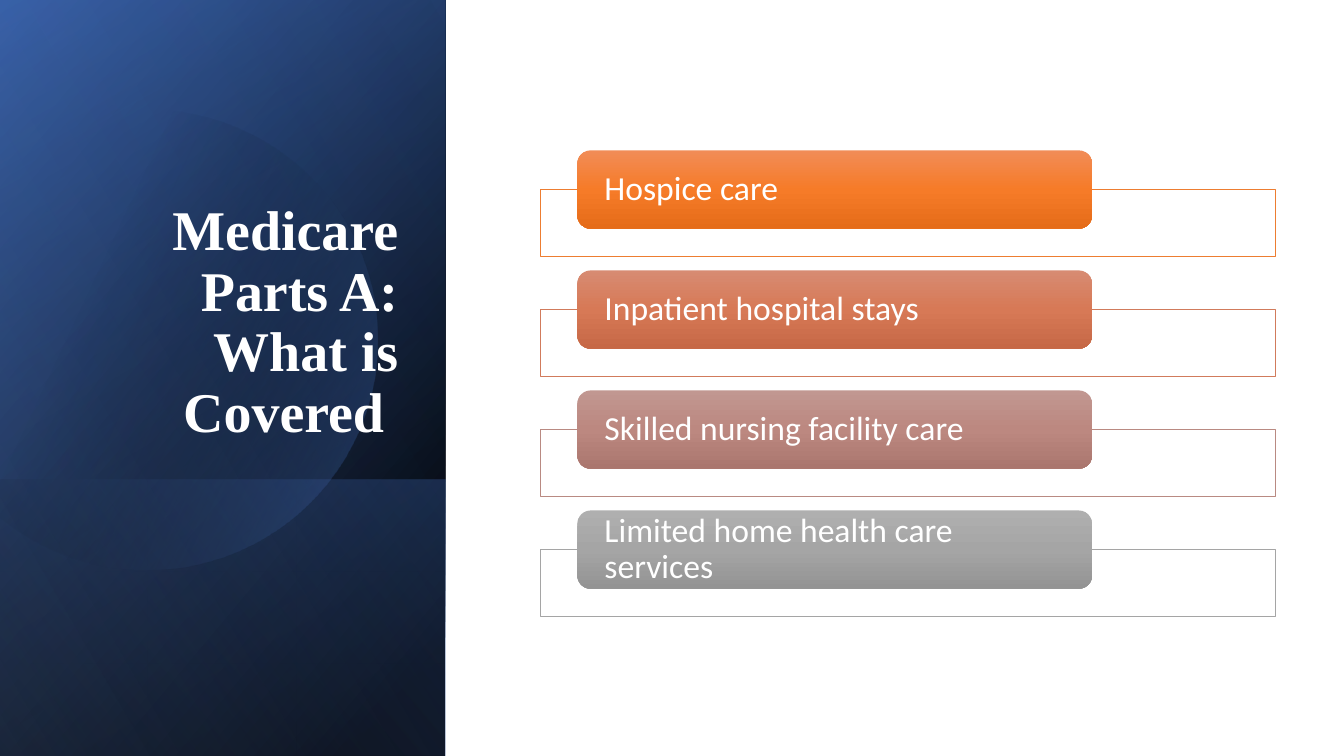
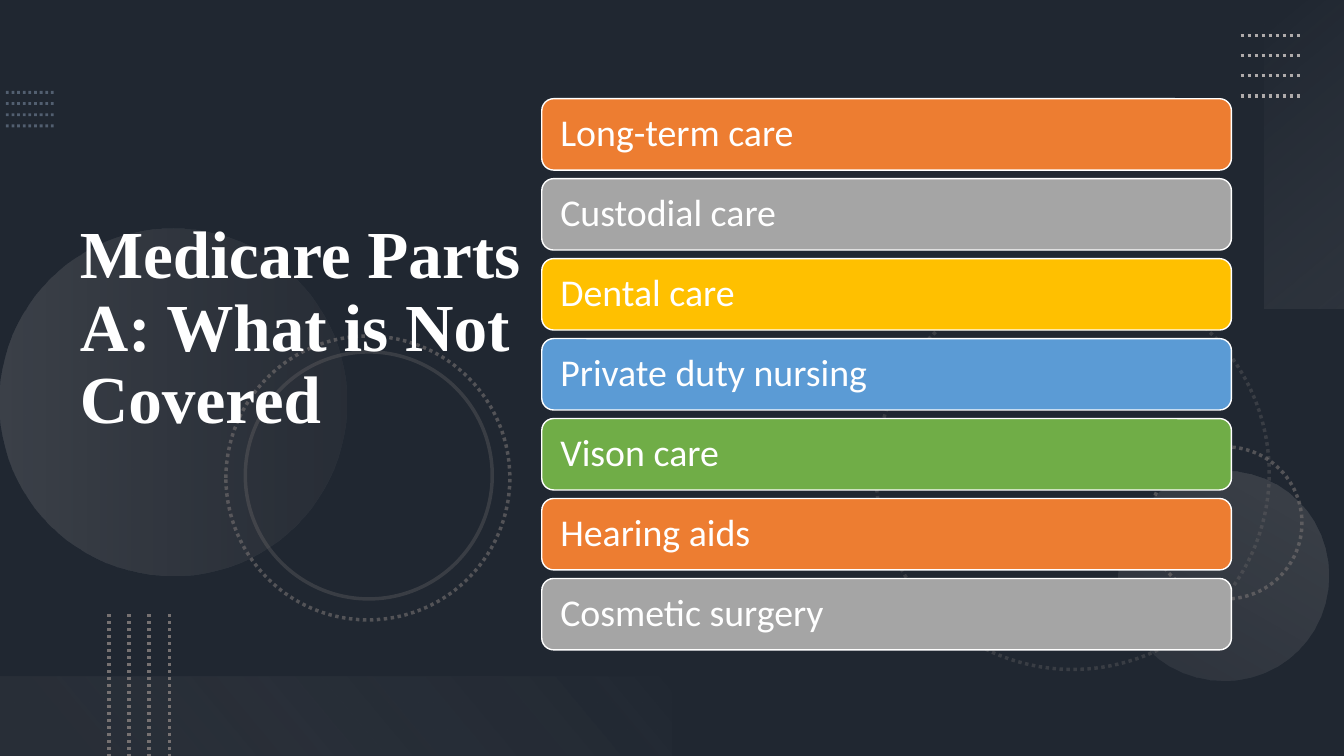
import math
from dataclasses import dataclass

from lxml import etree
from pptx import Presentation
from pptx import util as u
from pptx.dml.color import RGBColor
from pptx.enum import dml, shapes, text
from pptx.oxml import ns

COLS, ROWS = 160, 90
CELL = u.Inches(7.5) / ROWS


@dataclass(frozen=True)
class Theme:
    """Colours, fonts and type sizes of the deck."""
    white: str = "FFFFFF"
    black: str = "000000"
    navy: str = "2F5597"
    blue: str = "4472C4"
    pale_blue: str = "8FAADC"
    slate: str = "44546A"
    steel: str = "8497B0"
    silver: str = "AFABAB"
    stone: str = "767171"
    mist: str = "F5F5F5"
    orange: str = "ED7D31"
    grey: str = "A5A5A5"
    gold: str = "FFC000"
    sky: str = "5B9BD5"
    green: str = "70AD47"
    title_font: str = "Times New Roman"
    body_font: str = "Calibri"
    side_title: int = 40
    wide_title: int = 48
    card: int = 24
    bar: int = 27


T = Theme()


def cells(*values):
    """Turn grid cells into lengths."""
    return [u.Emu(round(v * CELL)) for v in values]


def add_alpha(colour, percent):
    """Make a colour element partly opaque."""
    if percent < 100:
        etree.SubElement(colour, ns.qn("a:alpha"), val=str(percent * 1000))


class Deck:
    """Draws styled elements on the current slide."""

    def __init__(self):
        """Start an empty wide presentation."""
        self.prs = Presentation()
        self.prs.slide_width, self.prs.slide_height = cells(COLS, ROWS)
        self.slide = None

    def new_slide(self, colour):
        """Add a title-only slide with a plain background."""
        self.slide = self.prs.slides.add_slide(self.prs.slide_layouts[5])
        fill = self.slide.background.fill
        fill.solid()
        fill.fore_color.rgb = RGBColor.from_string(colour)

    def title(self, words, box, size, align, anchor):
        """Place the title above everything drawn so far."""
        sp = self.slide.shapes.title
        self.slide.shapes._spTree.append(sp._element)
        sp.left, sp.top, sp.width, sp.height = cells(*box)
        self.label(sp, words, T.title_font, size, align, anchor)
        sp.text_frame.paragraphs[0].font.bold = True

    def label(self, sp, words, font, size, align=text.PP_ALIGN.LEFT,
              anchor=text.MSO_ANCHOR.MIDDLE):
        """Set one white paragraph in a shape."""
        tf = sp.text_frame
        tf.word_wrap, tf.auto_size = True, text.MSO_AUTO_SIZE.NONE
        tf.vertical_anchor = anchor
        p = tf.paragraphs[0]
        p.text, p.alignment, p.line_spacing = words, align, 0.9
        p.font.name, p.font.size = font, u.Pt(size)
        p.font.color.rgb = RGBColor.from_string(T.white)

    def stroke(self, line, colour, width, dotted=False, opacity=100):
        """Style an outline or a connector."""
        line.color.rgb = RGBColor.from_string(colour)
        line.width = u.Pt(width)
        if dotted:
            line.dash_style = dml.MSO_LINE.ROUND_DOT
        add_alpha(line._ln.find(".//" + ns.qn("a:srgbClr")), opacity)

    def paint(self, sp, fill=None, opacity=100, stops=None, angle=0):
        """Give a shape no fill, a solid fill or a gradient, and no line."""
        sp.shadow.inherit = False
        sp.line.fill.background()
        props = sp._element.spPr
        if fill:
            sp.fill.solid()
            sp.fill.fore_color.rgb = RGBColor.from_string(fill)
            add_alpha(props.find(ns.qn("a:solidFill"))[0], opacity)
            return
        sp.fill.background()
        if stops:
            grad = etree.Element(ns.qn("a:gradFill"), rotWithShape="1")
            gs_list = etree.SubElement(grad, ns.qn("a:gsLst"))
            for pos, colour, alpha in stops:
                gs = etree.SubElement(gs_list, ns.qn("a:gs"), pos=str(pos * 1000))
                add_alpha(etree.SubElement(gs, ns.qn("a:srgbClr"), val=colour), alpha)
            etree.SubElement(grad, ns.qn("a:lin"), ang=str(angle * 60000), scaled="0")
            props.replace(props.find(ns.qn("a:noFill")), grad)

    def shape(self, kind, box, **paint):
        """Add a preset shape."""
        sp = self.slide.shapes.add_shape(kind, *cells(*box))
        self.paint(sp, **paint)
        return sp

    def rect(self, box, **paint):
        """Add a rectangle."""
        return self.shape(shapes.MSO_SHAPE.RECTANGLE, box, **paint)

    def disc(self, x, y, size, **paint):
        """Add a circle."""
        return self.shape(shapes.MSO_SHAPE.OVAL, (x, y, size, size), **paint)

    def pill(self, words, box, size, inset, **paint):
        """Add a rounded bar with a label."""
        sp = self.shape(shapes.MSO_SHAPE.ROUNDED_RECTANGLE, box, **paint)
        tf = sp.text_frame
        tf.margin_left = tf.margin_right = u.Inches(inset)
        self.label(sp, words, T.body_font, size)
        return sp

    def cut_disc(self, cx, cy, radius, **paint):
        """Add a circle cut off at the left edge of the slide."""
        limit = math.acos(-cx / radius)
        turns = [limit * (i / 60 - 1) for i in range(121)]
        points = [cells(cx + radius * math.cos(a), cy + radius * math.sin(a))
                  for a in turns]
        builder = self.slide.shapes.build_freeform(*points[0])
        builder.add_line_segments(points[1:])
        self.paint(builder.convert_to_shape(), **paint)

    def dots(self, start, end, step, colour, width, opacity=100):
        """Add four parallel dotted lines."""
        for i in range(4):
            dx, dy = step[0] * i, step[1] * i
            line = self.slide.shapes.add_connector(
                shapes.MSO_CONNECTOR.STRAIGHT,
                *cells(start[0] + dx, start[1] + dy, end[0] + dx, end[1] + dy))
            self.stroke(line.line, colour, width, True, opacity)
            etree.SubElement(line._element.spPr, ns.qn("a:effectLst"))


def covered(deck):
    """Build the slide of covered services."""
    deck.new_slide(T.white)
    panel = (0, 0, 53, ROWS)
    deck.rect(panel, stops=[(8, T.black, 100), (100, T.navy, 100)], angle=220)
    deck.rect(panel, stops=[(0, T.black, 0), (99, T.blue, 46)], angle=240)
    deck.rect((0, 57.1, 53, 32.9), stops=[(2, T.blue, 29), (100, T.black, 30)], angle=140)
    deck.cut_disc(17.5, 40.4, 27.4, stops=[(29, T.black, 0), (100, T.blue, 43)], angle=25)
    deck.rect(panel, stops=[(0, T.black, 0), (99, T.pale_blue, 11)], angle=150)
    deck.title("Medicare Parts A: What is Covered ", (7.7, 22.1, 40.9, 31.4),
               T.side_title, text.PP_ALIGN.RIGHT, text.MSO_ANCHOR.BOTTOM)
    services = [
        ("Hospice care", T.orange, ("F18C57", "F67B28", "E56C19")),
        ("Inpatient hospital stays", "D17B5C", ("D78B72", "D77956", "C66846")),
        ("Skilled nursing facility care", "B98A82", ("C19791", "BC8880", "AA766E")),
        ("Limited home health care services", T.grey, ("AFAFAF", T.grey, "939393")),
    ]
    for i, (words, edge, shades) in enumerate(services):
        y = 17.9 + 14.29 * i
        frame = deck.rect((64.3, y + 4.66, 87.5, 7.95), fill=T.white, opacity=90)
        deck.stroke(frame.line, edge, 0.5)
        stops = [(50 * k, shade, 100) for k, shade in enumerate(shades)]
        deck.pill(words, (68.75, y, 61.25, 9.3), T.card, 0.23, stops=stops, angle=90)


def not_covered(deck):
    """Build the slide of services that are not covered."""
    deck.new_slide(T.slate)
    deck.rect((0, 0, COLS, ROWS), fill=T.black, opacity=53)
    deck.dots((0.7, 11), (6.4, 11), (0, 1.33), T.steel, 2, 50)
    deck.disc(0, 27.2, 41.3, stops=[(0, T.silver, 20), (100, T.stone, 10)])
    deck.disc(133.2, 56, 25, stops=[(0, T.silver, 10), (100, T.silver, 20)], angle=300)
    rings = [(104.3, 32.9, 46.8, True, 30), (136.9, 53.2, 18.1, True, 60),
             (26.9, 40, 33.8, True, 60), (29.2, 41.9, 29.4, False, 30)]
    for x, y, size, dotted, opacity in rings:
        deck.stroke(deck.disc(x, y, size).line, T.stone, 2.5, dotted, opacity)
    deck.rect((150.6, 0, 9.4, 36.75), stops=[(0, T.mist, 0), (100, T.silver, 10)], angle=50)
    deck.dots((147.7, 4.2), (154.9, 4.2), (0, 2.4), T.silver, 2.5)
    deck.rect((0, 80.6, 80, 9.4), stops=[(10, T.stone, 10), (100, T.mist, 0)], angle=320)
    deck.dots((12.95, 73.1), (12.95, ROWS), (2.4, 0), T.stone, 2.5)
    deck.title("Medicare Parts A: What is Not Covered ", (8.3, 6.5, 55, 65.4),
               T.wide_title, text.PP_ALIGN.LEFT, text.MSO_ANCHOR.MIDDLE)
    services = [
        ("Long-term care", T.orange), ("Custodial care", T.grey),
        ("Dental care", T.gold), ("Private duty nursing", T.sky),
        ("Vison care", T.green), ("Hearing aids", T.orange),
        ("Cosmetic surgery", T.grey),
    ]
    for i, (words, colour) in enumerate(services):
        bar = deck.pill(words, (64.5, 11.75 + 9.52 * i, 82.1, 8.5), T.bar, 0.15, fill=colour)
        deck.stroke(bar.line, T.white, 1)


def main():
    """Build and save the deck."""
    deck = Deck()
    covered(deck)
    not_covered(deck)
    deck.prs.save("out.pptx")


if __name__ == "__main__":
    main()
